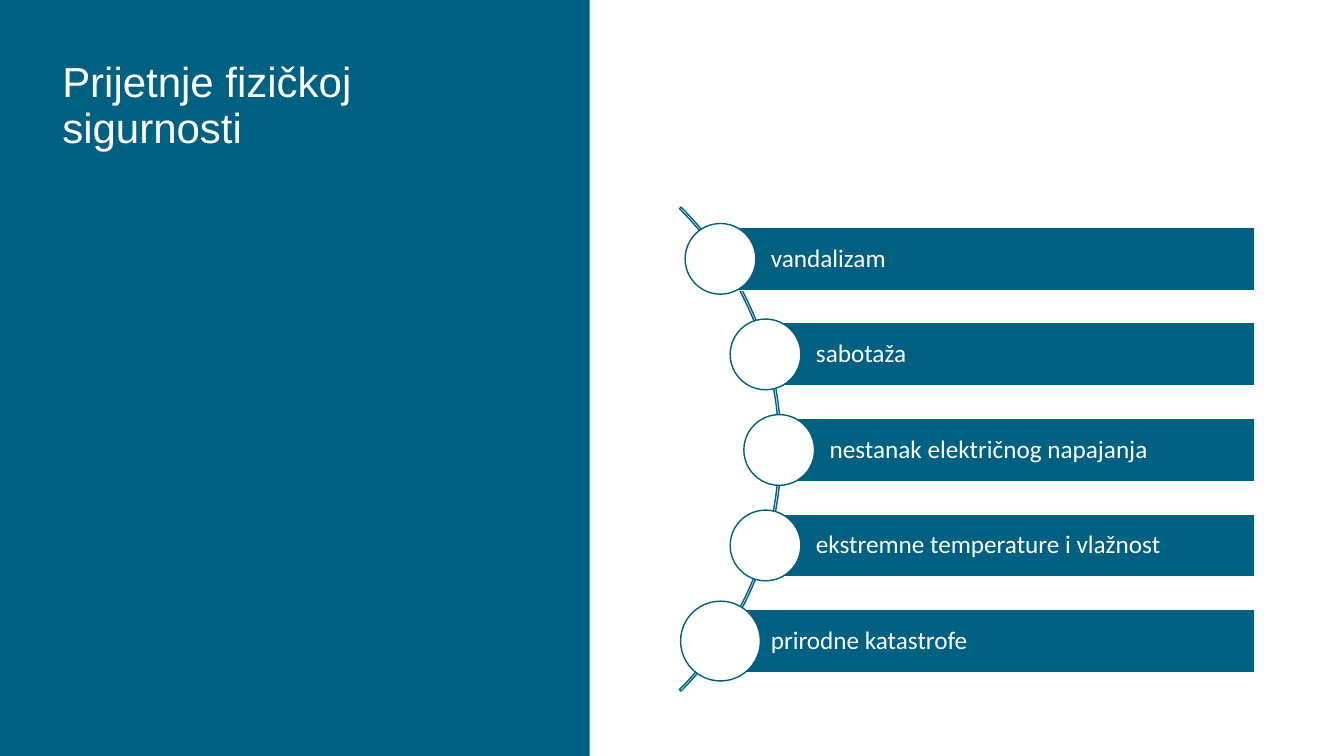
from math import sqrt
from pptx import Presentation
from pptx.dml.color import RGBColor
from pptx.enum.shapes import MSO_SHAPE as SHAPE
from pptx.enum.text import MSO_ANCHOR as ANCHOR, PP_ALIGN as ALIGN
from pptx.util import Pt

# Content
TITLE = "Prijetnje fizičkoj sigurnosti"
THREATS = [  # label, circle diameter
    ("vandalizam", 50.5),
    ("sabotaža", 50.5),
    ("nestanak električnog napajanja", 50.5),
    ("ekstremne temperature i vlažnost", 50.5),
    ("prirodne katastrofe", 57),
]
TEAL, WHITE = "006081", "FEFFFE"

# Layout: circles sit on an arc, each bar starts at its circle's centre
SLIDE_W, SLIDE_H = 960, 540
PANEL_W = 421.2
ARC_X, ARC_Y, ARC_SIZE = 313.6, 320.8, 488.9
RADIUS = 243
MID_Y, PITCH = 321.4, 68.25
BAR_RIGHT, BAR_H = 896.4, 45.2

prs = Presentation()
prs.slide_width, prs.slide_height = Pt(SLIDE_W), Pt(SLIDE_H)
s = prs.slides.add_slide(prs.slide_layouts[6])


def color(hex_code):
    return RGBColor.from_string(hex_code)


def add_shape(kind, x, y, w, h, fill, line=None):
    sp = s.shapes.add_shape(kind, Pt(x), Pt(y), Pt(w), Pt(h))
    sp.shadow.inherit = False
    sp.fill.solid()
    sp.fill.fore_color.rgb = color(fill)
    if line:
        sp.line.color.rgb = color(line)
        sp.line.width = Pt(1)
    else:
        sp.line.fill.background()
    return sp


def write(sp, text, font, size, anchor, insets):
    tf = sp.text_frame
    tf.word_wrap = True
    tf.vertical_anchor = anchor
    tf.margin_left, tf.margin_top, tf.margin_right, tf.margin_bottom = map(Pt, insets)
    p = tf.paragraphs[0]
    p.alignment = ALIGN.LEFT
    p.line_spacing = 0.9
    r = p.add_run()
    r.text = text
    r.font.name, r.font.size = font, Pt(size)
    r.font.color.rgb = color(WHITE)


# Background, panel and title
s.background.fill.solid()
s.background.fill.fore_color.rgb = color(WHITE)
add_shape(SHAPE.RECTANGLE, 0, 0, PANEL_W, SLIDE_H, TEAL)
title = s.shapes.add_textbox(Pt(37.4), Pt(37.4), Pt(344.2), Pt(74.9))
write(title, TITLE, "Arial", 30, ANCHOR.BOTTOM, (7.2, 3.6, 7.2, 3.6))

# Arc behind the list
arc = add_shape(SHAPE.BLOCK_ARC, ARC_X - ARC_SIZE / 2, ARC_Y - ARC_SIZE / 2,
                ARC_SIZE, ARC_SIZE, WHITE, TEAL)
for i, value in enumerate((189, 27, 0.0032)):
    arc.adjustments[i] = value

# Bars and circles
for i, (label, size) in enumerate(THREATS):
    dy = (i - len(THREATS) // 2) * PITCH
    x, y = ARC_X + sqrt(RADIUS ** 2 - dy ** 2), MID_Y + dy
    bar = add_shape(SHAPE.RECTANGLE, x, y - BAR_H / 2, BAR_RIGHT - x, BAR_H, TEAL, WHITE)
    write(bar, label, "Calibri", 18, ANCHOR.MIDDLE, (36, 3, 3, 3))
    add_shape(SHAPE.OVAL, x - size / 2, y - size / 2, size, size, WHITE, TEAL)

prs.save("out.pptx")
